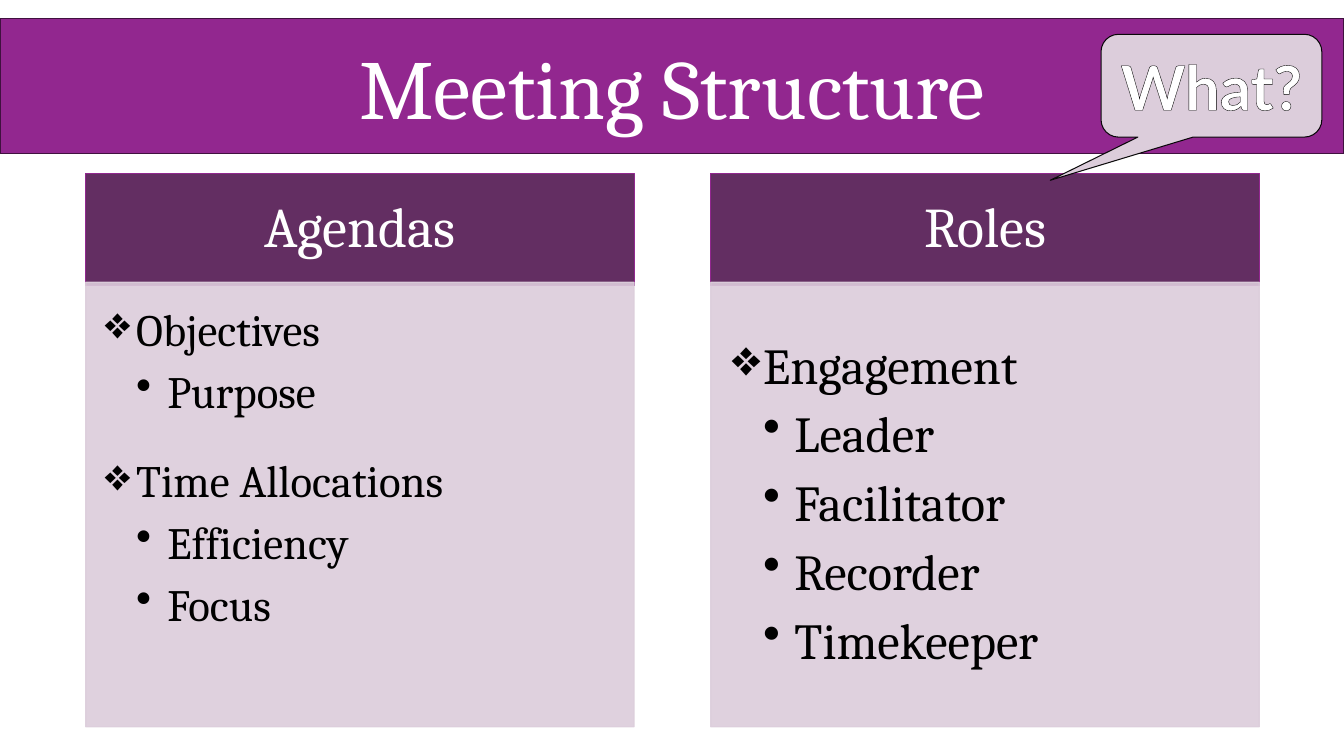
from lxml import etree
from pptx import Presentation
from pptx import util as u
from pptx.dml.color import RGBColor
from pptx.enum import shapes, text
from pptx.oxml import ns

PX = 9144  # 100 px to the inch

WHITE = RGBColor(0xFF, 0xFF, 0xFF)
BLACK = RGBColor(0, 0, 0)
PURPLE = RGBColor(0x92, 0x27, 0x8F)
DARK_EDGE = RGBColor(0x40, 0x11, 0x3F)
PLUM = RGBColor(0x63, 0x2E, 0x62)
LILAC = RGBColor(0xDC, 0xCD, 0xDB)

COLUMN_WIDTH = 544
INDENT = 31

# left, heading, text size, insets, (level, text, line spacing)
COLUMNS = [
    (85, "Agendas", 32, (19, 19, 25, 28), [
        (1, "Objectives", 1.0),
        (2, "Purpose", 1.0),
        (1, "Time Allocations", 1.5),
        (2, "Efficiency", 1.0),
        (2, "Focus", 1.0),
    ]),
    (705, "Roles", 36, (21, 21, 28, 32), [
        (1, "Engagement", 1.5),
        (2, "Leader", 1.0),
        (2, "Facilitator", 1.0),
        (2, "Recorder", 1.0),
        (2, "Timekeeper", 1.0),
    ]),
]
BULLETS = {1: "❖", 2: "•"}


def set_alpha(fill, percent):
    """Make a solid fill partly transparent."""
    color = fill._xPr.find(ns.qn("a:solidFill"))[0]
    etree.SubElement(color, ns.qn("a:alpha")).set("val", str(percent * 1000))


def add_box(s, kind, box, fill, line, line_width=0.85):
    sp = s.shapes.add_shape(kind, *(v * PX for v in box))
    sp.shadow.inherit = False
    sp.fill.solid()
    sp.fill.fore_color.rgb = fill
    sp.line.color.rgb = line
    sp.line.width = u.Pt(line_width)
    sp.text_frame.word_wrap = True
    return sp


def set_insets(tf, left, top, right, bottom):
    tf.margin_left, tf.margin_top = left * PX, top * PX
    tf.margin_right, tf.margin_bottom = right * PX, bottom * PX


def style_runs(p, size, color, font="Cambria", bold=False):
    for r in p.runs:
        r.font.size = u.Pt(size)
        r.font.name = font
        r.font.color.rgb = color
        r.font.bold = bold


def set_centred(sp, words, size, **style):
    tf = sp.text_frame
    tf.text = words
    tf.vertical_anchor = text.MSO_ANCHOR.MIDDLE
    p = tf.paragraphs[0]
    p.alignment = text.PP_ALIGN.CENTER
    style_runs(p, size, WHITE, **style)
    return p


def set_bullet(p, level):
    pPr = p._p.get_or_add_pPr()
    pPr.set("marL", str(level * INDENT * PX))
    pPr.set("indent", str(-INDENT * PX))
    etree.SubElement(pPr, ns.qn("a:buChar")).set("char", BULLETS[level])


def add_column(s, left, heading, size, insets, items):
    header = add_box(s, shapes.MSO_SHAPE.RECTANGLE,
                     (left, 172, COLUMN_WIDTH, 111), PLUM, PURPLE)
    set_insets(header.text_frame, 31, 18, 31, 18)
    set_centred(header, heading, 40).line_spacing = 0.9

    body = add_box(s, shapes.MSO_SHAPE.RECTANGLE,
                   (left, 280, COLUMN_WIDTH, 441), LILAC, LILAC)
    set_alpha(body.fill, 90)
    set_alpha(body.line.fill, 90)
    tf = body.text_frame
    set_insets(tf, *insets)
    tf.vertical_anchor = text.MSO_ANCHOR.TOP
    tf.text = "\n".join(words for _, words, _ in items)
    for p, (level, _, spacing) in zip(tf.paragraphs, items):
        set_bullet(p, level)
        p.level = level
        p.alignment = text.PP_ALIGN.LEFT
        p.line_spacing = spacing
        p.space_after = u.Pt(6)
        style_runs(p, size, BLACK)


def add_callout(s):
    sp = add_box(s, shapes.MSO_SHAPE.ROUNDED_RECTANGULAR_CALLOUT,
                 (1092, 34, 219, 102), LILAC, BLACK, 0.75)
    set_alpha(sp.line.fill, 95)
    for i, value in enumerate((-0.73, 0.92, 0.17)):
        sp.adjustments[i] = value
    p = set_centred(sp, "What?", 44, font="Lato", bold=True)
    outline = etree.Element(ns.qn("a:ln"), w=str(u.Pt(1.75)))
    fill = etree.SubElement(outline, ns.qn("a:solidFill"))
    etree.SubElement(fill, ns.qn("a:srgbClr")).set("val", str(BLACK))
    p.runs[0].font._element.insert(0, outline)


def main():
    prs = Presentation()
    prs.slide_width, prs.slide_height = 1333 * PX, 750 * PX
    s = prs.slides.add_slide(prs.slide_layouts[6])
    banner = add_box(s, shapes.MSO_SHAPE.RECTANGLE, (0, 18, 1333, 134),
                     PURPLE, DARK_EDGE)
    set_centred(banner, "Meeting Structure", 60)
    for column in COLUMNS:
        add_column(s, *column)
    add_callout(s)
    prs.save("out.pptx")


if __name__ == "__main__":
    main()
